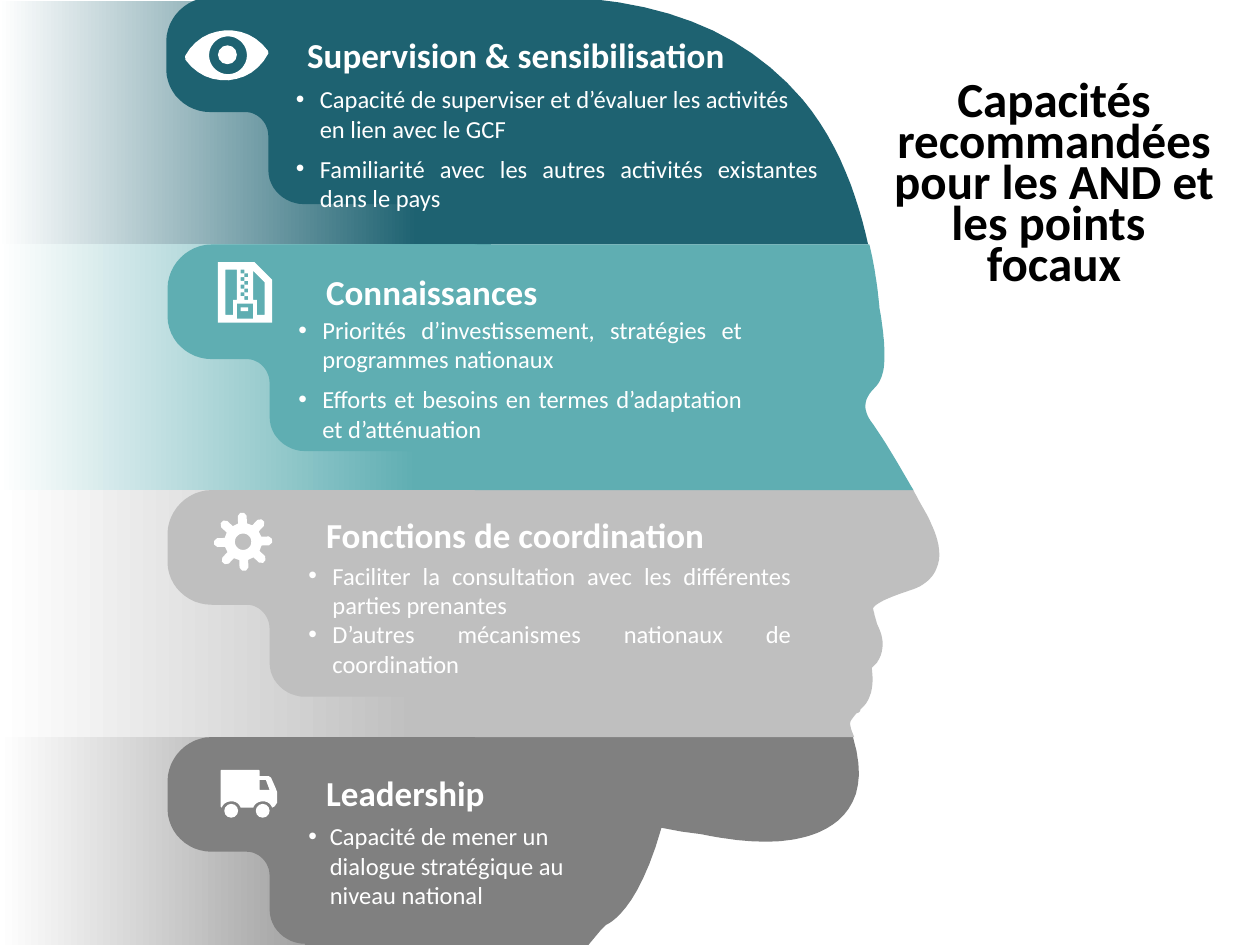
import math
from lxml import etree
from pptx import Presentation
from pptx import util as u
from pptx.dml.color import RGBColor
from pptx.enum import shapes, text
from pptx.oxml.ns import qn

WHITE = RGBColor(0xFF, 0xFF, 0xFF)
BLACK = RGBColor(0, 0, 0)
NAVY_TEAL = RGBColor(0x1E, 0x62, 0x71)
TEAL = RGBColor(0x5F, 0xAE, 0xB2)
SILVER = RGBColor(0xBF, 0xBF, 0xBF)
GREY = RGBColor(0x80, 0x80, 0x80)
COLUMNS, ROWS = 10, 7.5
FADE_WIDTH = 3.91
LEFT, CENTER, JUSTIFY = text.PP_ALIGN.LEFT, text.PP_ALIGN.CENTER, text.PP_ALIGN.JUSTIFY


def flatten(steps, pieces=12):
    """Turn points (x, y) and cubic steps (x1, y1, x2, y2, x, y) into points."""
    points = []
    for step in steps:
        if len(step) == 2:
            points.append(step)
            continue
        start, controls = points[-1], (step[:2], step[2:4], step[4:])
        for piece in range(1, pieces + 1):
            t = piece / pieces
            weights = ((1 - t) ** 3, 3 * t * (1 - t) ** 2, 3 * t * t * (1 - t), t ** 3)
            points.append(tuple(sum(w * p[axis] for w, p in zip(weights, (start, *controls)))
                                for axis in (0, 1)))
    return points


def box(left, top, right, bottom):
    return [(left, top), (left, bottom), (right, bottom), (right, top)]


def ring(x, y, radius, count=40):
    return [(x + radius * math.cos(2 * math.pi * i / count),
             y - radius * math.sin(2 * math.pi * i / count)) for i in range(count)]


def tab(top, left=1.33):
    """Rounded tab at the left of a band, from its lower edge up to its top."""
    outline = [(1.09, 1.64), (0.94, 1.64, 0.81, 1.52, 0.81, 1.37), (0.81, 1.1),
               (0.81, 1, 0.73, 0.91, 0.63, 0.91), (0.35, 0.91),
               (0.16, 0.91, 0, 0.76, 0, 0.57), (0, 0.35), (0, 0.16, 0.16, 0, 0.35, 0)]
    return [tuple(v + (top if i % 2 else left) for i, v in enumerate(step)) for step in outline]


def seam(bottom, top):
    """Rounded joint between a band and the underside of its tab."""
    return [(3.77, bottom), (3.84, bottom, 3.89, bottom - 0.05, 3.89, bottom - 0.11),
            (3.89, top + 1.76), (3.89, top + 1.69, 3.84, top + 1.64, 3.77, top + 1.64)]


def gear(x, y, teeth=8, tilt=-2):
    tooth = [(0.145, -0.035), (0.205, -0.035), (0.23, -0.015),
             (0.23, 0.015), (0.205, 0.035), (0.145, 0.035)]
    points = []
    for i in range(teeth):
        angle = math.radians(tilt + 360 * i / teeth)
        cos, sin = math.cos(angle), math.sin(angle)
        points += [(x + a * cos - b * sin, y + a * sin + b * cos) for a, b in tooth]
    return points


class Deck:
    font = "Calibri"

    def __init__(self):
        self.presentation = Presentation()
        self.presentation.slide_width = u.Inches(10)
        self.presentation.slide_height = u.Inches(7.5)
        self.cell = self.presentation.slide_width / COLUMNS
        self.slide = self.presentation.slides.add_slide(self.presentation.slide_layouts[6])

    def grid(self, *lengths):
        return [u.Emu(round(length * self.cell)) for length in lengths]

    def paint(self, shape, color):
        shape.shadow.inherit = False
        shape.fill.solid()
        shape.fill.fore_color.rgb = color
        shape.line.fill.background()

    def preset(self, kind, place, color):
        shape = self.slide.shapes.add_shape(kind, *self.grid(*place))
        self.paint(shape, color)
        return shape

    def fade(self, top, height, color):
        shape = self.preset(shapes.MSO_SHAPE.RECTANGLE, (-0.01, top, FADE_WIDTH, height), color)
        shape.fill.gradient()
        shape.fill.gradient_angle = 180
        for stop, position, tint in zip(shape.fill.gradient_stops, (0.15, 1), (color, WHITE)):
            stop.position = position
            stop.color.rgb = tint

    def outline(self, color, *contours, rotation=0):
        builder = None
        for contour in contours:
            points = [(x * 1000, y * 1000) for x, y in flatten(contour)]
            if builder is None:
                builder = self.slide.shapes.build_freeform(*points[0], scale=self.cell / 1000)
            else:
                builder.move_to(*points[0])
            builder.add_line_segments(points[1:], close=True)
        shape = builder.convert_to_shape()
        shape.rotation = rotation
        self.paint(shape, color)

    def textbox(self, place, words, size, color, bold=False, wrap=True):
        frame = self.slide.shapes.add_textbox(*self.grid(*place)).text_frame
        frame.word_wrap = wrap
        frame.text = words
        for paragraph in frame.paragraphs:
            for run in paragraph.runs:
                run.font.name, run.font.size, run.font.bold = self.font, u.Pt(size), bold
                run.font.color.rgb = color
        return frame

    def title(self, place, words):
        paragraph = self.textbox(place, words, 28, BLACK, bold=True).paragraphs[0]
        paragraph.alignment = CENTER
        paragraph.line_spacing = 0.7

    def heading(self, left, top, width, words):
        frame = self.textbox((left, top, width, 0.44), words, 20, WHITE, bold=True, wrap=False)
        frame.auto_size = text.MSO_AUTO_SIZE.SHAPE_TO_FIT_TEXT

    def bullets(self, place, items, alignments, gap=0, indent=0.19):
        frame = self.textbox(place, "\n".join(items), 14, WHITE)
        for i, (paragraph, alignment) in enumerate(zip(frame.paragraphs, alignments)):
            properties = paragraph._p.get_or_add_pPr()
            properties.set("marL", str(self.grid(indent)[0]))
            properties.set("indent", str(-self.grid(indent)[0]))
            etree.SubElement(properties, qn("a:buFont")).set("typeface", "Arial")
            etree.SubElement(properties, qn("a:buChar")).set("char", "•")
            paragraph.alignment = alignment
            if i and gap:
                paragraph.space_before = u.Pt(gap)


def main():
    deck = Deck()
    oval, rectangle = shapes.MSO_SHAPE.OVAL, shapes.MSO_SHAPE.RECTANGLE
    deck.title((6.86, 0.62, 3.01, 1.79),
               "Capacités recommandées pour les AND et les points \vfocaux")

    # Head profile of each band, from its top to its bottom
    forehead = [(4.05, -0.02), (4.11, -0.02, 4.17, -0.03, 4.23, -0.03),
                (5.21, -0.03, 5.89, 0.23, 6.37, 0.79), (6.67, 1.15, 6.81, 1.58, 6.89, 1.94)]
    brow = [(6.9, 1.94), (6.95, 2.15, 6.97, 2.33, 6.98, 2.44), (6.98, 2.46, 6.99, 2.49, 6.99, 2.5),
            (7.01, 2.63, 7.02, 2.73, 7.02, 2.82), (7.02, 2.94, 7, 3.02, 6.94, 3.08),
            (6.85, 3.17, 6.85, 3.25, 6.91, 3.34), (7.02, 3.49, 7.15, 3.72, 7.25, 3.89)]
    nose = [(7.25, 3.89), (7.3, 3.99, 7.35, 4.07, 7.37, 4.11), (7.41, 4.2, 7.5, 4.37, 7.43, 4.52),
            (7.41, 4.57, 7.35, 4.65, 7.21, 4.69), (6.93, 4.78, 6.93, 4.83, 6.93, 4.83),
            (6.94, 4.88, 6.95, 4.91, 6.96, 4.95), (7, 5.03, 7.04, 5.14, 6.96, 5.26), (6.92, 5.3),
            (6.93, 5.39, 6.94, 5.54, 6.83, 5.63), (6.83, 5.65, 6.81, 5.66, 6.8, 5.66),
            (6.74, 5.73, 6.74, 5.73, 6.76, 5.8), (6.78, 5.85)]
    chin = [(6.77, 5.85), (6.91, 6.31, 6.71, 6.51, 6.51, 6.6), (6.4, 6.65, 6.25, 6.68, 6.08, 6.68),
            (5.89, 6.68, 5.71, 6.65, 5.56, 6.62), (5.41, 6.6), (5.25, 6.57),
            (5.06, 7.24, 4.83, 7.33, 4.81, 7.34), (4.77, 7.38), (4.72, 7.44), (4.67, 7.5)]

    # Fading strips, then the bands of the head
    for top, bottom, color in ((0.01, 1.97, NAVY_TEAL), (1.94, 3.89, TEAL),
                               (3.89, 5.85, SILVER), (5.85, ROWS, GREY)):
        deck.fade(top, bottom - top, color)
    deck.outline(GREY, tab(5.85) + chin + [(2.42, ROWS)])
    deck.outline(NAVY_TEAL, seam(1.94, -0.02) + tab(-0.02, 1.32) + forehead)
    deck.outline(SILVER, seam(5.85, 3.89) + tab(3.89) + nose)
    deck.outline(TEAL, seam(3.89, 1.94) + tab(1.94) + brow)

    # Supervision: eye
    eye = [(1.47, 0.42), (1.47, 0.45), (1.62, 0.7, 1.98, 0.7, 2.13, 0.45), (2.13, 0.43),
           (1.98, 0.18, 1.62, 0.18, 1.47, 0.42)]
    deck.outline(WHITE, eye, ring(1.81, 0.44, 0.15), rotation=355.7)
    deck.preset(oval, (1.73, 0.36, 0.15, 0.15), WHITE)
    deck.heading(2.34, 0.22, 3.66, "Supervision & sensibilisation")
    deck.bullets((2.25, 0.62, 4.34, 1.13),
                 ["Capacité de superviser et d’évaluer les activités en lien avec le GCF",
                  "Familiarité avec les autres activités existantes dans le pays"],
                 (LEFT, JUSTIFY), gap=6)

    # Connaissances: zipped file
    sheet = [(2.02, 2.08), (1.73, 2.08), (1.73, 2.56), (2.16, 2.56), (2.16, 2.22)]
    left_page = [(1.85, 2.5), (1.79, 2.5), (1.79, 2.14), (1.88, 2.14), (1.88, 2.38), (1.85, 2.38)]
    right_page = [(2.1, 2.5), (2.04, 2.5), (2.04, 2.38), (2.01, 2.38), (2.01, 2.15), (2.1, 2.24)]
    zipper = [box(1.91 + 0.03 * (i % 2), 2.14 + 0.03 * i, 1.94 + 0.03 * (i % 2), 2.17 + 0.03 * i)
              for i in range(8)]
    deck.outline(WHITE, sheet, left_page, right_page, box(1.88, 2.41, 2.01, 2.53), *zipper)
    deck.preset(rectangle, (1.91, 2.44, 0.06, 0.03), WHITE)
    deck.heading(2.49, 2.1, 1.97, "Connaissances")
    deck.bullets((2.27, 2.45, 3.72, 1.13),
                 ["Priorités d’investissement, stratégies et programmes nationaux",
                  "Efforts et besoins en termes d’adaptation et d’atténuation"],
                 (JUSTIFY, JUSTIFY), gap=6)

    # Fonctions de coordination: gear
    deck.outline(WHITE, gear(1.93, 4.3), ring(1.93, 4.3, 0.065))
    deck.heading(2.49, 4.03, 3.36, "Fonctions de coordination")
    deck.bullets((2.35, 4.4, 4.03, 1.04),
                 ["Faciliter la consultation avec les différentes parties prenantes",
                  "D’autres mécanismes nationaux de coordination"], (JUSTIFY, JUSTIFY))

    # Leadership: truck
    truck = [(1.77, 6.11), (2.04, 6.11), (2.05, 6.11, 2.06, 6.11, 2.06, 6.12), (2.06, 6.16),
             (2.13, 6.16), (2.14, 6.16, 2.14, 6.17, 2.15, 6.17), (2.19, 6.26),
             (2.19, 6.27, 2.2, 6.28, 2.2, 6.29), (2.2, 6.37), (2.18, 6.4), (2.16, 6.41),
             (2.15, 6.38, 2.12, 6.36, 2.09, 6.36), (2.05, 6.36, 2.02, 6.38, 2.01, 6.41),
             (1.91, 6.41), (1.9, 6.38, 1.87, 6.36, 1.84, 6.36),
             (1.8, 6.36, 1.77, 6.38, 1.76, 6.41), (1.75, 6.4), (1.75, 6.12),
             (1.75, 6.11, 1.76, 6.11, 1.77, 6.11)]
    deck.outline(WHITE, truck, [(2.06, 6.27), (2.14, 6.27), (2.11, 6.19), (2.06, 6.19)])
    for wheel in (1.78, 2.03):
        deck.preset(oval, (wheel, 6.38, 0.11, 0.11), WHITE)
    deck.heading(2.49, 6.07, 1.54, "Leadership")
    deck.bullets((2.35, 6.47, 2.54, 0.81),
                 ["Capacité de mener un dialogue stratégique au niveau national"],
                 (LEFT,), indent=0.17)
    deck.presentation.save("out.pptx")


if __name__ == "__main__":
    main()
